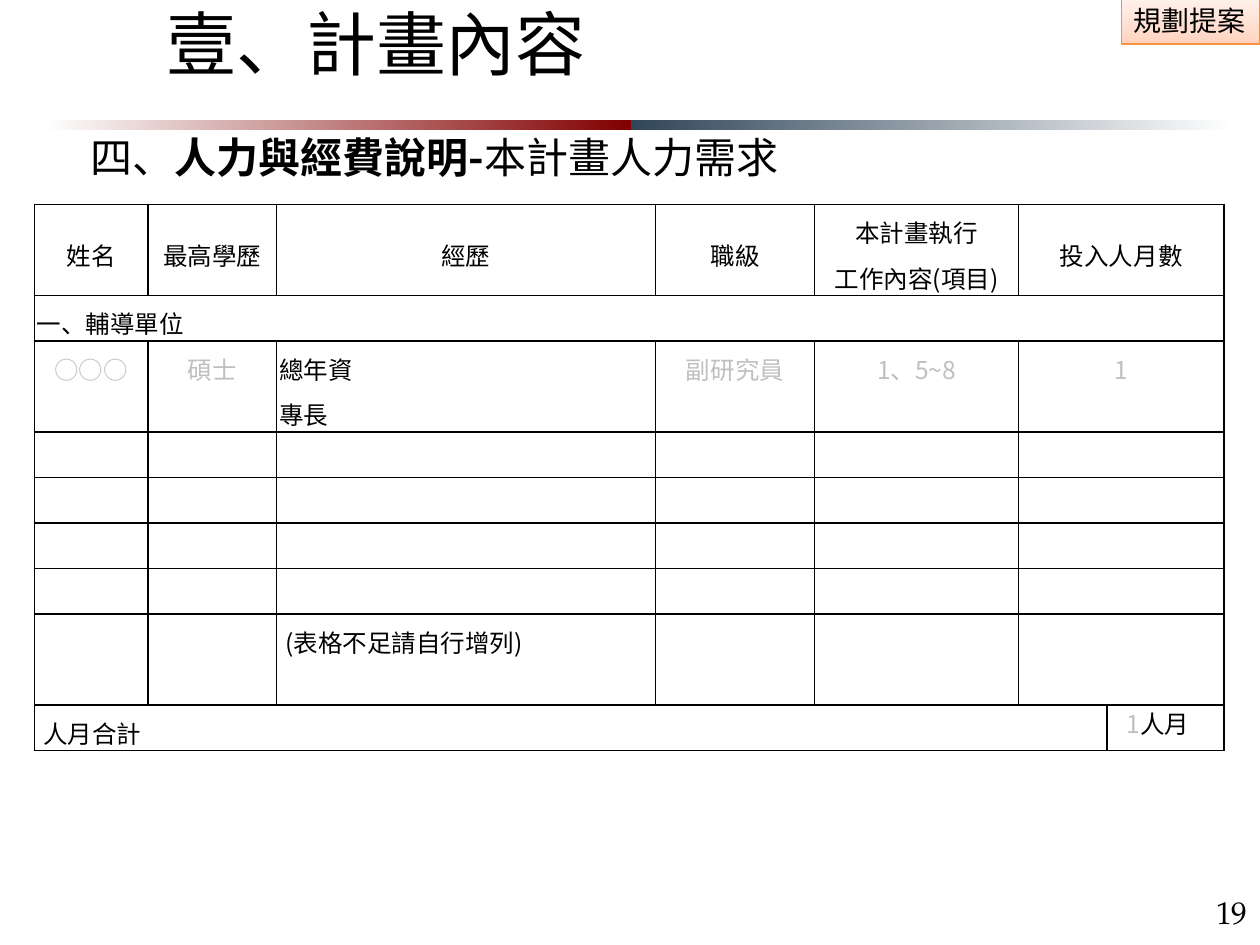
import copy
import pptx
import pptx.util
import pptx.dml.color
import pptx.enum.shapes
import pptx.enum.text
import pptx.oxml
import pptx.oxml.ns
from lxml import etree

Pt = pptx.util.Pt
ALIGN = pptx.enum.text.PP_ALIGN
ANCHOR = pptx.enum.text.MSO_ANCHOR
RECT = pptx.enum.shapes.MSO_SHAPE.RECTANGLE
CJK = "Noto Sans CJK SC"
qn = pptx.oxml.ns.qn


def rgb(value):
    return pptx.dml.color.RGBColor.from_string(value)


def style(r, size, color="000000", name=CJK, bold=False):
    r.font.size = Pt(size)
    r.font.bold = bold
    r.font.color.rgb = rgb(color)
    r.font.name = name
    etree.SubElement(r.font._element, qn("a:ea"), typeface=name)


prs = pptx.Presentation()
prs.slide_width, prs.slide_height = Pt(720), Pt(540)
s = prs.slides.add_slide(prs.slide_layouts[5])

gradients = [
    (640.8, -1.5, 79.2, 26.7, 90, [(0, "FFD2BD"), (0.35, "FFDED0"), (1, "FFF2ED")]),
    (25.2, 68.4, 335.5, 5.8, 0, [(0, "FFFFFF"), (1, "800000")]),
    (360.7, 68.4, 344.2, 5.8, 0, [(0, "314659"), (1, "FFFFFF")]),
]
shapes = []
for x, y, w, h, angle, stops in gradients:
    sp = s.shapes.add_shape(RECT, Pt(x), Pt(y), Pt(w), Pt(h))
    sp.shadow.inherit = False
    sp.line.fill.background()
    sp.fill.gradient()
    sp.fill.gradient_angle = angle
    gs_list = sp._element.spPr.find(".//" + qn("a:gsLst"))
    while len(gs_list) < len(stops):
        gs_list.append(copy.deepcopy(gs_list[0]))
    for stop, (position, color) in zip(sp.fill.gradient_stops, stops):
        stop.position = position
        stop.color.rgb = rgb(color)
    shapes.append(sp)

badge = shapes[0]
badge.line.color.rgb = rgb("F69240")
badge.line.width = Pt(0.75)
tf = badge.text_frame
tf.word_wrap = False
tf.vertical_anchor = ANCHOR.MIDDLE
tf.text = "規劃提案"
style(tf.paragraphs[0].runs[0], 16)

title = s.shapes.title
title.left, title.top, title.width, title.height = Pt(87.8), Pt(0), Pt(481.7), Pt(49)
heading = s.shapes.add_textbox(Pt(8.6), Pt(71.3), Pt(553), Pt(36))
number = s.shapes.add_textbox(Pt(658), Pt(512), Pt(62), Pt(28))
for sp in (title, heading, number):
    tf = sp.text_frame
    tf.word_wrap = True
    tf.auto_size = pptx.enum.text.MSO_AUTO_SIZE.NONE
    tf.vertical_anchor = ANCHOR.MIDDLE
    tf.margin_top = tf.margin_bottom = 0
    tf.paragraphs[0].alignment = ALIGN.LEFT

p = title.text_frame.paragraphs[0]
p.text = "壹、計畫內容"
style(p.runs[0], 40)

heading.text_frame.margin_left = Pt(43.2)
p = heading.text_frame.paragraphs[0]
for text, bold in [("四、", False), ("人力與經費說明-", True), ("本計畫人力需求", False)]:
    r = p.add_run()
    r.text = text
    style(r, 24, bold=bold)

p = number.text_frame.paragraphs[0]
p.text = "19"
p.alignment = ALIGN.RIGHT
p.line_spacing = Pt(12)
style(p.runs[0], 18, name="TeX Gyre Pagella")

widths = [65, 73.5, 216.5, 91, 116.5, 50.5, 67]
heights = [52, 26, 52, 26, 26, 26, 26, 52, 26]
tbl = s.shapes.add_table(len(heights), len(widths), Pt(19.6), Pt(116.8),
                         Pt(sum(widths)), Pt(sum(heights))).table
tbl.first_row = tbl.horz_banding = False
for column, width in zip(tbl.columns, widths):
    column.width = Pt(width)
for row, height in zip(tbl.rows, heights):
    row.height = Pt(height)

rows = {
    0: ["姓名", "最高學歷", "經歷", "職級", "本計畫執行\n工作內容(項目)", "投入人月數"],
    1: ["一、輔導單位"],
    2: ["○○○", "碩士", "總年資\n專長", "副研究員", "1、5~8", "1"],
    7: ["", "", "(表格不足請自行增列)"],
    8: ["人月合計"],
}
left_cells = {(1, 0): 1.4, (2, 2): 1.4, (7, 2): 5, (8, 0): 5}
for i in range(len(heights)):
    for j in range(len(widths)):
        cell = tbl.cell(i, j)
        cell.fill.background()
        cell.margin_left = Pt(left_cells.get((i, j), 1.4))
        cell.margin_right = Pt(1.4)
        cell.margin_top = cell.margin_bottom = 0
        cell.vertical_anchor = ANCHOR.MIDDLE if i == 0 else ANCHOR.TOP
        texts = rows.get(i, [])
        cell.text = texts[j] if j < len(texts) else ""
        for p in cell.text_frame.paragraphs:
            p.line_spacing = Pt(26)
            p.alignment = ALIGN.LEFT if (i, j) in left_cells else ALIGN.CENTER
            for r in p.runs:
                style(r, 14, "BFBFBF" if i == 2 and j != 2 else "000000")
        tcPr = cell._tc.get_or_add_tcPr()
        for k, side in enumerate(("lnL", "lnR", "lnT", "lnB")):
            tcPr.insert(k, pptx.oxml.parse_xml(
                f'<a:{side} xmlns:a="http://schemas.openxmlformats.org/drawingml/2006/main" w="12700">'
                f'<a:solidFill><a:srgbClr val="000000"/></a:solidFill></a:{side}>'))

total = tbl.cell(8, 6)
total.margin_left = Pt(11.4)
p = total.text_frame.paragraphs[0]
p.alignment = ALIGN.LEFT
p.line_spacing = 1.0
for text, color in [("1", "BFBFBF"), ("人月", "000000")]:
    r = p.add_run()
    r.text = text
    style(r, 14, color)

for i in range(len(heights)):
    first, last = {1: (0, 6), 8: (0, 5)}.get(i, (5, 6))
    tbl.cell(i, first).merge(tbl.cell(i, last))

prs.save("out.pptx")
